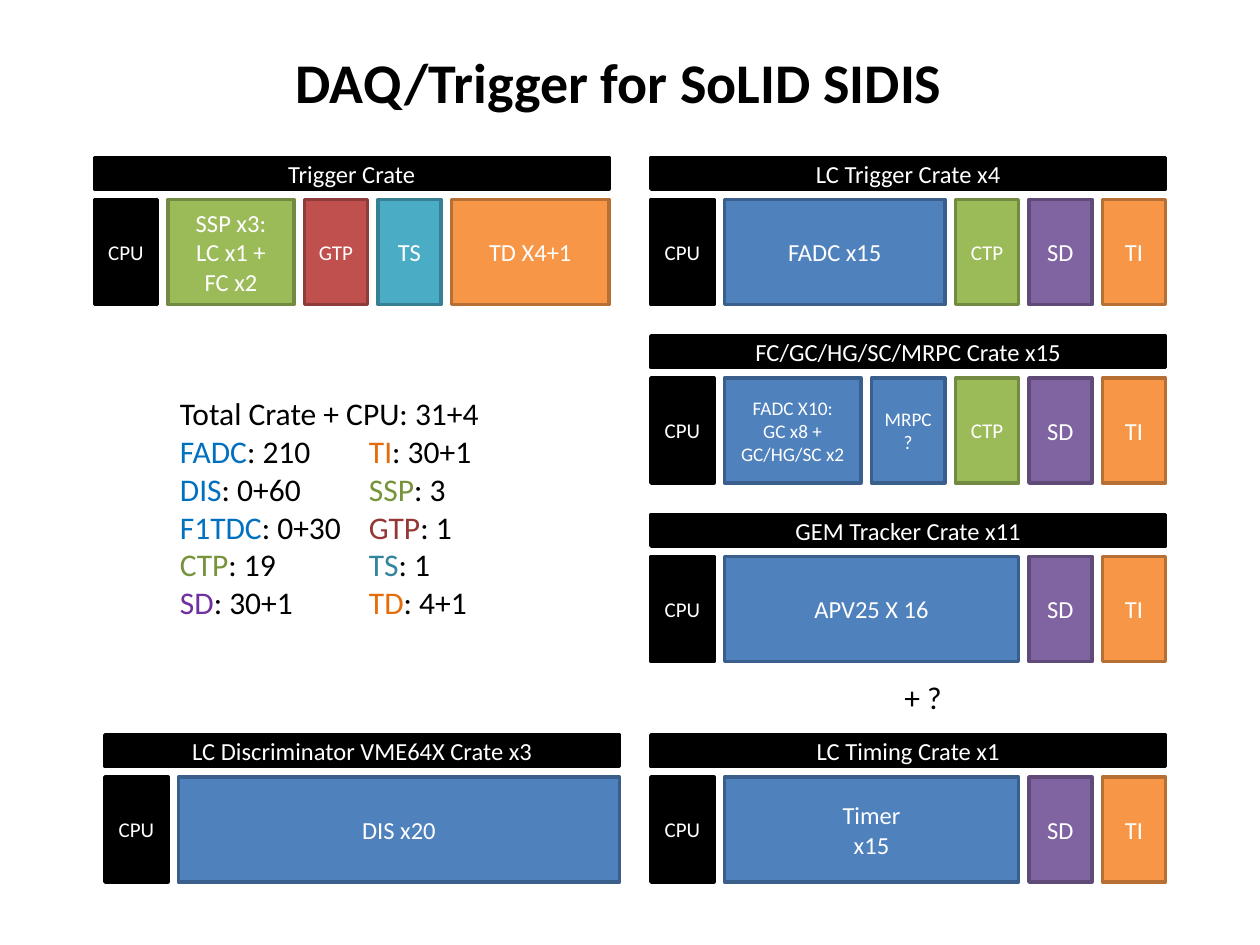
from pptx import Presentation
from pptx.dml.color import RGBColor
from pptx.enum import shapes, text
from pptx.util import Inches, Pt

FONT = "Calibri"
BLACK, WHITE = "000000", "FFFFFF"

# Crate grid: every length is a whole number of twelfths of an inch
UNIT = 1 / 12
GAP, CRATE_WIDTH, HEADER_HEIGHT, MODULE_HEIGHT = 1, 49, 3, 10

# Module colour: fill, outline
STYLES = {
    "black": (BLACK, BLACK),
    "blue": ("4F81BD", "3A5F8C"),
    "green": ("9BBB59", "738A42"),
    "red": ("C0504D", "8E3B39"),
    "teal": ("4BACC6", "377F92"),
    "orange": ("F79646", "B76F34"),
    "purple": ("8064A2", "5F4A78"),
}

# Module: label, width, style, font size
CPU = ("CPU", 6, "black", 12)
CTP = ("CTP", 6, "green", 12)
SD = ("SD", 6, "purple", 14)
TI = ("TI", 6, "orange", 14)

# Crate: title, left, top, modules
CRATES = [
    ("Trigger Crate", 9, 15, [
        CPU,
        ("SSP x3:\nLC x1 +\nFC x2", 12, "green", 14),
        ("GTP", 6, "red", 12),
        ("TS", 6, "teal", 14),
        ("TD X4+1", 15, "orange", 14),
    ]),
    ("LC Trigger Crate x4", 62, 15,
     [CPU, ("FADC x15", 21, "blue", 14), CTP, SD, TI]),
    ("FC/GC/HG/SC/MRPC Crate x15", 62, 32, [
        CPU,
        ("FADC X10:\nGC x8 +\nGC/HG/SC x2", 13, "blue", 11),
        ("MRPC\n?", 7, "blue", 11),
        CTP, SD, TI,
    ]),
    ("GEM Tracker Crate x11", 62, 49,
     [CPU, ("APV25 X 16", 28, "blue", 14), SD, TI]),
    ("LC Discriminator VME64X Crate x3", 10, 70,
     [CPU, ("DIS x20", 42, "blue", 14)]),
    ("LC Timing Crate x1", 62, 70,
     [CPU, ("Timer\nx15", 28, "blue", 14), SD, TI]),
]

# Text: left, top, width, height, wrap, size, bold, paragraphs of (text, colour) runs
TEXTS = [
    (2.25, 0.33, 5.37, 0.64, False, 32, True,
     [[("DAQ/Trigger for SoLID SIDIS", BLACK)]]),
    (1.33, 3.08, 3, 1.92, True, 18, False, [
        [("Total Crate + CPU: 31+4", BLACK)],
        [("FADC", "0070C0"), (": 210", BLACK)],
        [("DIS", "0070C0"), (": 0+60", BLACK)],
        [("F1TDC", "0070C0"), (": 0+30", BLACK)],
        [("CTP", "77933C"), (": 19", BLACK)],
        [("SD", "7030A0"), (": 30+1", BLACK)],
    ]),
    (2.83, 3.38, 1.21, 1.62, True, 18, False, [
        [("TI", "E46C0A"), (": 30+1", BLACK)],
        [("SSP", "77933C"), (": 3", BLACK)],
        [("GTP", "953735"), (": 1", BLACK)],
        [("TS", "31859C"), (": 1", BLACK)],
        [("TD", "E46C0A"), (": 4+1", BLACK)],
    ]),
    (7.08, 5.33, 0.5, 0.4, False, 18, False, [[("+ ?", BLACK)]]),
]


def color(hex_value):
    return RGBColor.from_string(hex_value)


def set_font(font, size, bold=False):
    font.name, font.size, font.bold = FONT, Pt(size), bold


def add_box(slide, left, top, width, height, label, style, size):
    """Add a labelled rectangle; lengths are in grid units."""
    box = slide.shapes.add_shape(
        shapes.MSO_SHAPE.RECTANGLE,
        *(Inches(length * UNIT) for length in (left, top, width, height)))
    fill, outline = STYLES[style]
    box.shadow.inherit = False
    box.fill.solid()
    box.fill.fore_color.rgb = color(fill)
    box.line.color.rgb = color(outline)
    box.line.width = Pt(2)
    frame = box.text_frame
    frame.word_wrap = True
    frame.vertical_anchor = text.MSO_ANCHOR.MIDDLE
    frame.text = label
    for paragraph in frame.paragraphs:
        paragraph.alignment = text.PP_ALIGN.CENTER
        set_font(paragraph.font, size)
        paragraph.font.color.rgb = color(WHITE)


def add_crate(slide, title, left, top, modules):
    add_box(slide, left, top, CRATE_WIDTH, HEADER_HEIGHT, title, "black", 14)
    module_top = top + HEADER_HEIGHT + GAP
    for label, width, style, size in modules:
        add_box(slide, left, module_top, width, MODULE_HEIGHT, label, style, size)
        left += width + GAP


def add_text(slide, left, top, width, height, wrap, size, bold, lines):
    box = slide.shapes.add_textbox(
        Inches(left), Inches(top), Inches(width), Inches(height))
    frame = box.text_frame
    frame.word_wrap = wrap
    frame.auto_size = text.MSO_AUTO_SIZE.SHAPE_TO_FIT_TEXT
    for index, runs in enumerate(lines):
        paragraph = frame.add_paragraph() if index else frame.paragraphs[0]
        set_font(paragraph.font, size, bold)
        for content, run_color in runs:
            run = paragraph.add_run()
            run.text = content
            run.font.color.rgb = color(run_color)


def main():
    presentation = Presentation()
    presentation.slide_width, presentation.slide_height = Inches(10), Inches(7.5)
    slide = presentation.slides.add_slide(presentation.slide_layouts[6])
    for crate in CRATES:
        add_crate(slide, *crate)
    for block in TEXTS:
        add_text(slide, *block)
    presentation.save("out.pptx")


if __name__ == "__main__":
    main()
